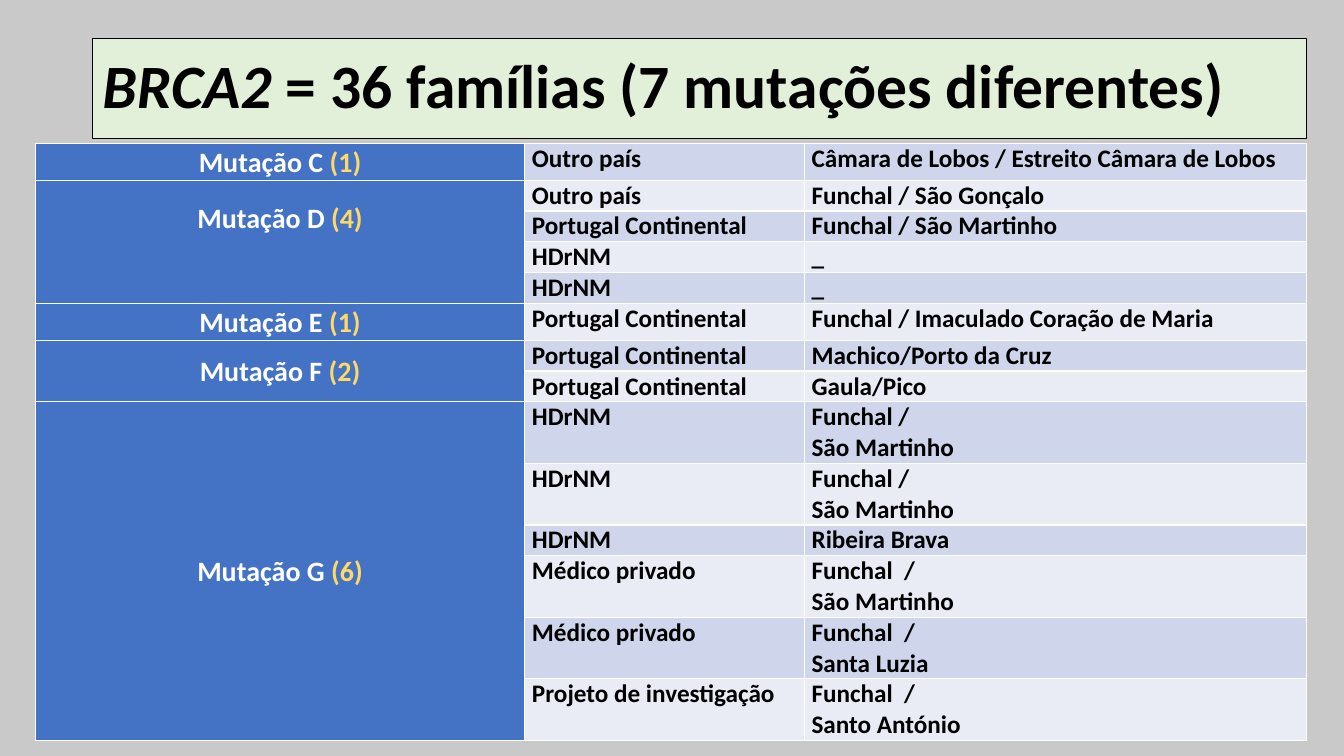
import pptx
import pptx.util
import pptx.dml.color
import pptx.enum.shapes
import pptx.enum.text
import pptx.oxml

Cm, Pt = pptx.util.Cm, pptx.util.Pt
ALIGN = pptx.enum.text.PP_ALIGN
MIDDLE = pptx.enum.text.MSO_ANCHOR.MIDDLE
NS = "http://schemas.openxmlformats.org/drawingml/2006/main"

LINE = 0.775  # height of one line of body text, in cm
TALL = 0.93   # height of a row that holds one group label

# Group label, count, bottom inset in cm, rows of (origin, place)
GROUPS = [
    ("Mutação C ", "(1)", 0, [
        ("Outro país", "Câmara de Lobos / Estreito Câmara de Lobos")]),
    ("Mutação D ", "(4)", 1.2, [
        ("Outro país", "Funchal / São Gonçalo"),
        ("Portugal Continental", "Funchal / São Martinho"),
        ("HDrNM", "_"),
        ("HDrNM", "_")]),
    ("Mutação E ", "(1)", 0, [
        ("Portugal Continental", "Funchal / Imaculado Coração de Maria")]),
    ("Mutação F ", "(2)", 0, [
        ("Portugal Continental", "Machico/Porto da Cruz"),
        ("Portugal Continental", "Gaula/Pico")]),
    ("Mutação G ", "(6)", 0, [
        ("HDrNM", "Funchal /\nSão Martinho"),
        ("HDrNM", "Funchal /\nSão Martinho"),
        ("HDrNM", "Ribeira Brava"),
        ("Médico privado", "Funchal  /\nSão Martinho"),
        ("Médico privado", "Funchal  /\nSanta Luzia"),
        ("Projeto de investigação", "Funchal  /\nSanto António")]),
]


def tint(code):
    return pptx.dml.color.RGBColor.from_string(code)


def apply(item, values):
    for name, value in values.items():
        setattr(item, name, value)


def paint(item, code):
    item.fill.solid()
    item.fill.fore_color.rgb = tint(code)


def write(para, text, size, code, slant=False):
    run = para.add_run()
    run.text = text
    apply(run.font, {"name": "Calibri", "size": Pt(size), "bold": True,
                     "italic": slant})
    run.font.color.rgb = tint(code)


def dress(cell, code, low=0):
    """Set insets, white borders and fill of a cell."""
    apply(cell, {"margin_left": Cm(0.18), "margin_right": Cm(0.18),
                 "margin_top": 0, "margin_bottom": Cm(low)})
    props = cell._tc.get_or_add_tcPr()
    for side in "LRTB":
        props.append(pptx.oxml.parse_xml(
            f'<a:ln{side} xmlns:a="{NS}" w="12700"><a:solidFill>'
            f'<a:srgbClr val="FFFFFF"/></a:solidFill></a:ln{side}>'))
    paint(cell, code)


def add_title(slide, left, top, width, height):
    box = slide.shapes.add_shape(
        pptx.enum.shapes.MSO_SHAPE.RECTANGLE,
        Cm(left), Cm(top), Cm(width), Cm(height))
    box.shadow.inherit = False
    paint(box, "E2F0D9")
    box.line.color.rgb = tint("000000")
    box.line.width = Pt(0.75)
    apply(box.text_frame, {"word_wrap": True, "vertical_anchor": MIDDLE})
    para = box.text_frame.paragraphs[0]
    apply(para, {"alignment": ALIGN.LEFT, "line_spacing": 0.9})
    write(para, "BRCA2", 44, "000000", True)
    write(para, " = 36 famílias (7 mutações diferentes)", 44, "000000")


def add_grid(slide, left, top, width, height):
    count = sum(len(rows) for *_, rows in GROUPS)
    grid = slide.shapes.add_table(
        count, 3, Cm(left), Cm(top), Cm(width), Cm(height)).table
    for col, share in zip(grid.columns, (0.385, 0.22, 0.395)):
        col.width = Cm(width * share)

    start = 0
    for label, total, low, rows in GROUPS:
        # Origin and place, in banded rows
        for num, pair in enumerate(rows, start):
            lines = pair[1].count("\n") + 1
            grid.rows[num].height = Cm(TALL if len(rows) == 1 else lines * LINE)
            band = "E9EBF5" if num % 2 else "CFD5EA"
            dress(grid.cell(num, 0), "4472C4", low)
            for col, text in enumerate(pair, 1):
                cell = grid.cell(num, col)
                dress(cell, band)
                for pos, part in enumerate(text.split("\n")):
                    frame = cell.text_frame
                    para = frame.add_paragraph() if pos else frame.paragraphs[0]
                    write(para, part, 18, "000000")

        # Group label, merged over its rows
        head = grid.cell(start, 0)
        if len(rows) > 1:
            head.merge(grid.cell(start + len(rows) - 1, 0))
        head.vertical_anchor = MIDDLE
        para = head.text_frame.paragraphs[0]
        apply(para, {"alignment": ALIGN.CENTER, "line_spacing": 1.07,
                     "space_after": Pt(8)})
        write(para, label, 20, "FFFFFF")
        write(para, total, 20, "FFD966")
        start += len(rows)


def main():
    deck = pptx.Presentation()
    apply(deck, {"slide_width": Cm(33.87), "slide_height": Cm(19.05)})
    slide = deck.slides.add_slide(deck.slide_layouts[6])
    paint(slide.background, "C9C9C9")
    add_grid(slide, 0.89, 3.61, 32.04, 15.05)
    add_title(slide, 2.33, 0.97, 30.6, 2.51)
    deck.save("out.pptx")


if __name__ == "__main__":
    main()
